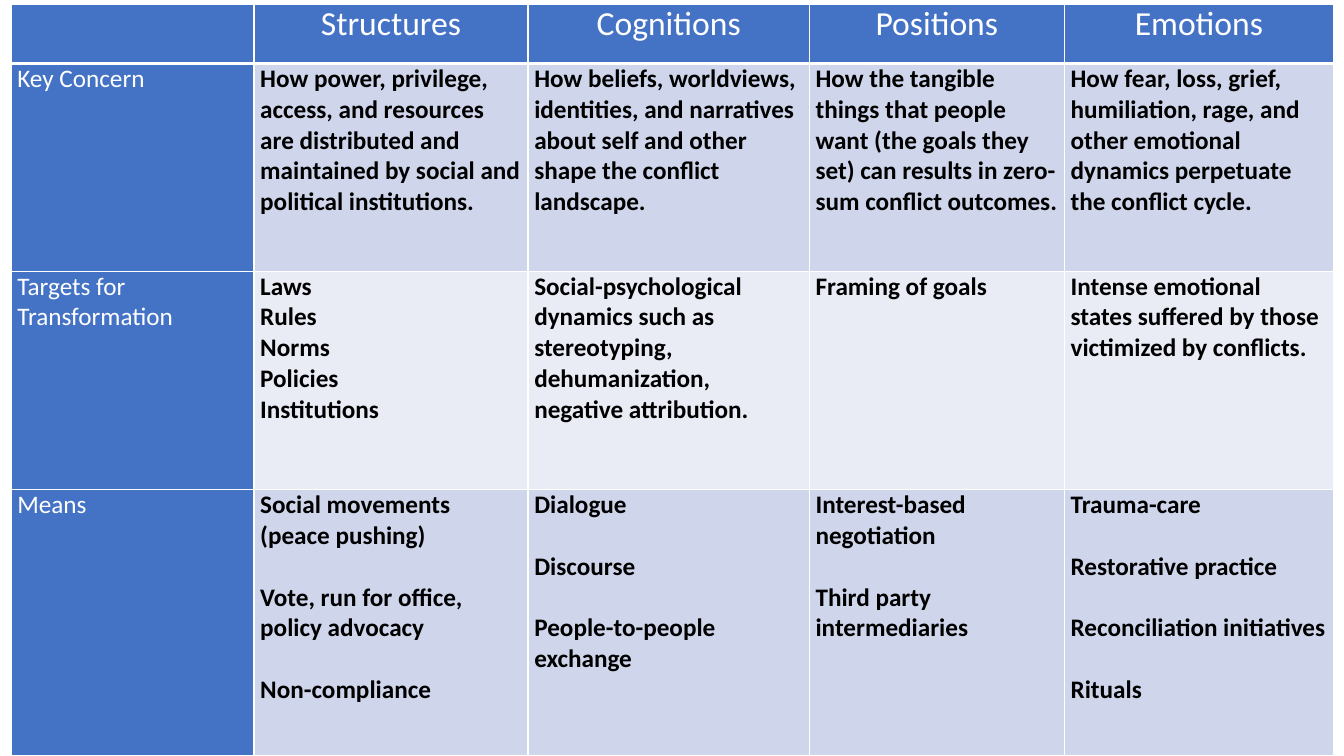
from dataclasses import dataclass

from lxml.etree import SubElement
from pptx import Presentation
from pptx.dml.color import RGBColor
from pptx.enum.text import PP_ALIGN as Align
from pptx.oxml.ns import qn
from pptx.table import _Cell as Cell
from pptx.util import Pt

WHITE, BLACK, BLUE = "FFFFFF", "000000", "4472C4"
PALE, PALER = "CFD5EA", "E9EBF5"
LEFT, TOP = 7.9, 2.9
COL_WIDTHS = [173.5, 195.8, 200.9, 182.2, 192.2]
LINE_GAP = 22


@dataclass
class CellStyle:
    fill: str
    color: str = WHITE
    size: float = 18
    bold: bool = False
    align: Align = Align.LEFT
    bottom_line: float = 1


@dataclass
class Row:
    height: float
    label: str
    entries: list[str]
    label_style: CellStyle
    style: CellStyle
    gap: float = 0


HEADER = CellStyle(BLUE, size=24, align=Align.CENTER, bottom_line=3)
LABEL = CellStyle(BLUE)
BAND_1 = CellStyle(PALE, BLACK, bold=True)
BAND_2 = CellStyle(PALER, BLACK, bold=True)

ROWS = [
    Row(42.5, "", ["Structures", "Cognitions", "Positions", "Emotions"], HEADER, HEADER),
    Row(148.3, "Key Concern", [
        "How power, privilege, access, and resources are distributed and "
        "maintained by social and political institutions.",
        "How beliefs, worldviews, identities, and narratives about self and "
        "other shape the conflict landscape.",
        "How the tangible things that people want (the goals they set) can "
        "results in zero-sum conflict outcomes.",
        "How fear, loss, grief, humiliation, rage, and other emotional "
        "dynamics perpetuate the conflict cycle.",
    ], LABEL, BAND_1),
    Row(156.2, "Targets for Transformation", [
        "Laws\nRules\nNorms\nPolicies\nInstitutions",
        "Social-psychological dynamics such as stereotyping, dehumanization, "
        "negative attribution.",
        "Framing of goals",
        "Intense emotional states suffered by those victimized by conflicts.",
    ], LABEL, BAND_2),
    Row(190.1, "Means", [
        "Social movements (peace pushing)\nVote, run for office, policy advocacy\n"
        "Non-compliance",
        "Dialogue\nDiscourse\nPeople-to-people exchange",
        "Interest-based negotiation\nThird party intermediaries",
        "Trauma-care\nRestorative practice\nReconciliation initiatives\nRituals",
    ], LABEL, BAND_1, LINE_GAP),
]


def rgb(value: str) -> RGBColor:
    return RGBColor.from_string(value)


def set_borders(cell: Cell, bottom_line: float) -> None:
    """Draw white lines on all four sides, ahead of the cell's fill."""
    tc_pr = cell._tc.get_or_add_tcPr()
    widths = {"a:lnL": 1, "a:lnR": 1, "a:lnT": 1, "a:lnB": bottom_line}
    for i, (tag, width) in enumerate(widths.items()):
        ln = SubElement(tc_pr, qn(tag), w=str(Pt(width)))
        SubElement(SubElement(ln, qn("a:solidFill")), qn("a:srgbClr"), val=WHITE)
        tc_pr.insert(i, ln)


def fill_cell(cell: Cell, text: str, style: CellStyle, gap: float) -> None:
    cell.fill.solid()
    cell.fill.fore_color.rgb = rgb(style.fill)
    set_borders(cell, style.bottom_line)
    cell.margin_left = cell.margin_right = Pt(4.5)
    cell.margin_top = cell.margin_bottom = Pt(0)
    tf = cell.text_frame
    tf.text = text
    for i, p in enumerate(tf.paragraphs):
        p.alignment = style.align
        p.space_before = Pt(gap if i else 0)
        for r in p.runs:
            r.font.name = "Calibri"
            r.font.size = Pt(style.size)
            r.font.bold = style.bold
            r.font.color.rgb = rgb(style.color)


def main() -> None:
    prs = Presentation()
    prs.slide_width, prs.slide_height = Pt(960), Pt(540)
    s = prs.slides.add_slide(prs.slide_layouts[6])
    table = s.shapes.add_table(
        len(ROWS), len(COL_WIDTHS), Pt(LEFT), Pt(TOP),
        Pt(sum(COL_WIDTHS)), Pt(sum(row.height for row in ROWS)),
    ).table
    for column, width in zip(table.columns, COL_WIDTHS):
        column.width = Pt(width)
    for i, row in enumerate(ROWS):
        table.rows[i].height = Pt(row.height)
        fill_cell(table.cell(i, 0), row.label, row.label_style, row.gap)
        for j, entry in enumerate(row.entries, 1):
            fill_cell(table.cell(i, j), entry, row.style, row.gap)
    prs.save("out.pptx")


if __name__ == "__main__":
    main()
